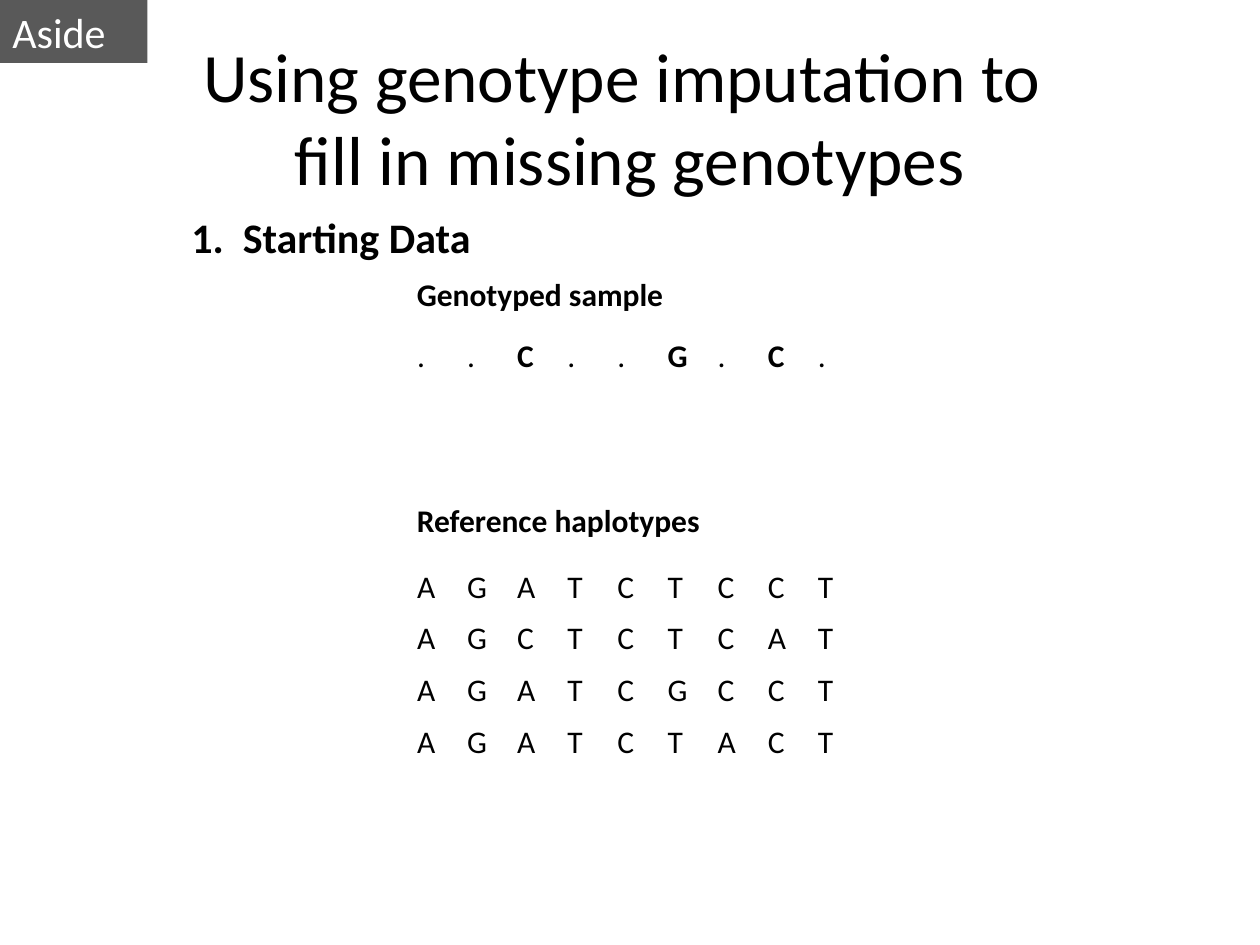
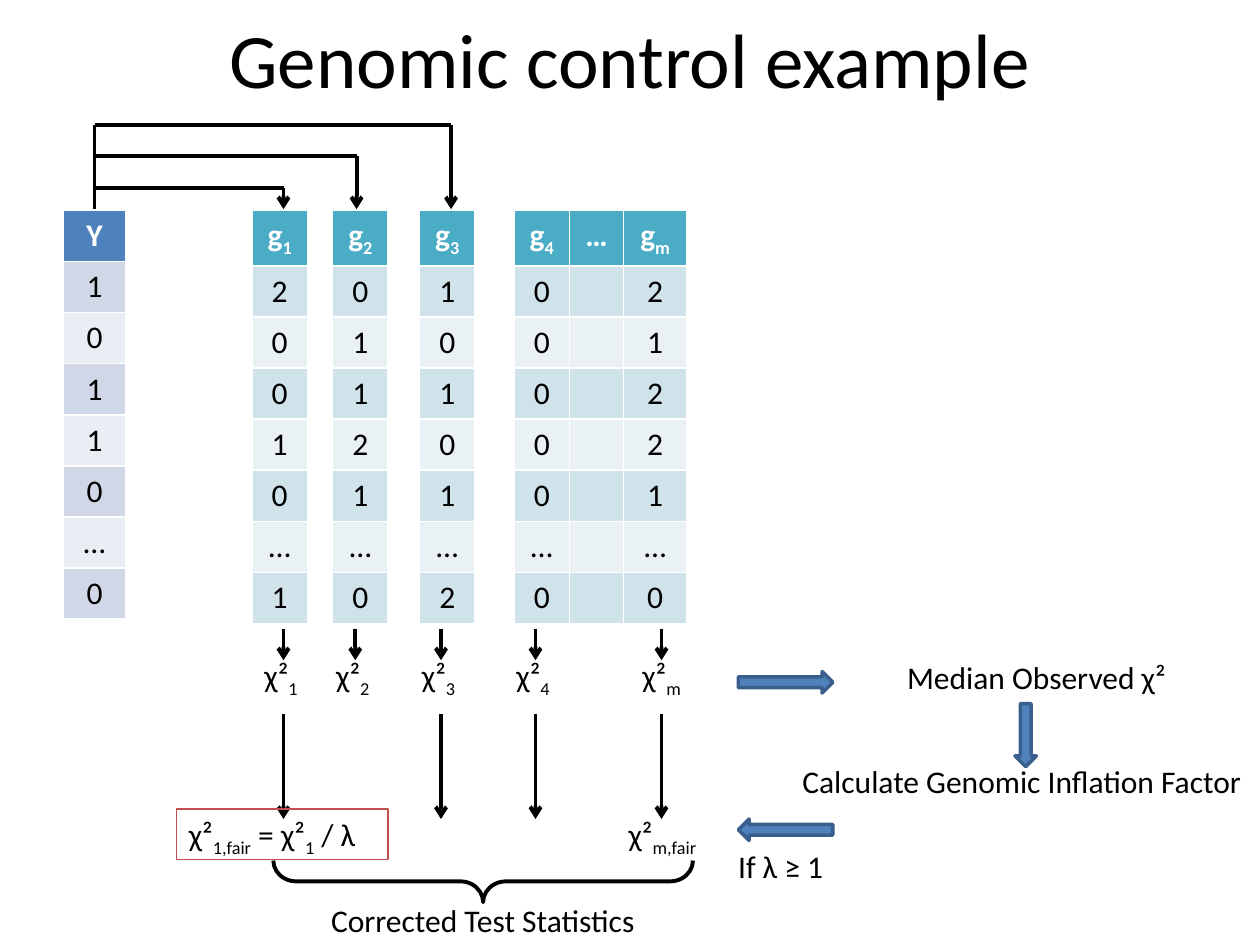
from dataclasses import dataclass

from lxml.etree import SubElement
from pptx import Presentation
from pptx.dml.color import RGBColor
from pptx.enum.shapes import MSO_CONNECTOR as Connector, MSO_SHAPE as Preset
from pptx.enum.text import MSO_ANCHOR as Anchor, MSO_AUTO_SIZE as AutoSize, PP_ALIGN as Align
from pptx.oxml.ns import qn
from pptx.util import Inches, Pt


@dataclass(frozen=True)
class Theme:
    font: str = "Calibri"
    black: str = "000000"
    white: str = "FFFFFF"
    tag: str = "595959"
    blue: str = "4F81BD"
    blue_edge: str = "3A5F8C"
    red: str = "C0504D"
    blue_table: tuple = ("4F81BD", "D0D8E8", "E9EDF4")
    teal_table: tuple = ("4BACC6", "D0E3EA", "E9F1F5")
    title: float = 44
    long_title: float = 39.6
    heading: float = 24
    body: float = 18
    stroke: float = 2.25


THEME = Theme()

IMPUTATION_TITLE = ["Using genotype imputation to ", "fill in missing genotypes"]
IMPUTATION_LABELS = [
    ("Genotyped sample", 3.21, 2.13, 2.2, 0.4, THEME.body),
    ("Reference haplotypes", 3.21, 3.93, 2.46, 0.4, THEME.body),
    ("1.  Starting Data", 1.42, 1.63, 2.44, 0.5, THEME.heading),
]
SAMPLE = ["..C..G.C."]
HAPLOTYPES = ["AGATCTCCT", "AGCTCTCAT", "AGATCGCCT", "AGATCTACT"]
SEQUENCE_LEFT, SEQUENCE_WIDTH, ROW_HEIGHT = 3.21, 3.58, 0.41

CONTROL_TITLE = ["Genomic control example"]
# Text is a tuple of parts: every second part is a subscript.
DATA_TABLES = [
    (0.5, [0.5], THEME.blue_table, [("Y",)], ["10110…0"]),
    (2, [0.44], THEME.teal_table, [("g", "1")], ["20010…1"]),
    (2.64, [0.44], THEME.teal_table, [("g", "2")], ["01121…0"]),
    (3.33, [0.44], THEME.teal_table, [("g", "3")], ["10101…2"]),
    (4.08, [0.44, 0.43, 0.5], THEME.teal_table,
     [("g", "4"), ("…",), ("g", "m")], ["00000…0", " " * 7, "21221…0"]),
]
DATA_TOP, DATA_HEIGHT = 1.67, 3.24
TRAIT_X, BRANCH_BOTTOM, BRANCH_STEP = 0.75, 1.66, 0.25
BRANCHES = [3.58, 2.83, 2.25]
BRANCH_TOP = 0.99
STATISTICS = [
    ("1", 2.25, 0.51, True),
    ("2", 2.82, 0.51, False),
    ("3", 3.5, 0.51, True),
    ("4", 4.25, 0.51, True),
    ("m", 5.25, 0.56, True),
]
CONTROL_LABELS = [
    (("Median Observed χ²",), 7.1, 5.17, 2.31),
    (("Calculate Genomic Inflation Factor",), 6.27, 6, 3.73),
    (("χ²", "m,fair"), 4.89, 6.42, 0.83),
    (("Corrected Test Statistics",), 2.53, 7.1, 2.64),
    (("If λ ≥ 1",), 5.76, 6.67, 0.91),
]
CORRECTION = ("χ²", "1,fair", " = χ²", "1", " / λ")
FLOW_ARROWS = [(5.86, 5.33, 0.75, 0), (7.89, 5.75, 0.5, 90), (5.86, 6.5, 0.75, 180)]


def rgb(color):
    return RGBColor.from_string(color)


def add_span(para, text, size=THEME.body, color=THEME.black, bold=False, subscript=False):
    span = para.add_run()
    span.text = text
    span.font.name = THEME.font
    span.font.size = Pt(size)
    span.font.bold = bold
    span.font.color.rgb = rgb(color)
    if subscript:
        span.font._element.set("baseline", "-25000")


def add_parts(para, parts, **style):
    for index, part in enumerate(parts):
        add_span(para, part, subscript=index % 2 == 1, **style)


def add_page(deck, lines, top, height, size):
    page = deck.slides.add_slide(deck.slide_layouts[5])
    title = page.shapes.title
    title.left, title.top = Inches(0.5), Inches(top)
    title.width, title.height = Inches(9), Inches(height)
    title.text_frame.vertical_anchor = Anchor.MIDDLE
    para = title.text_frame.paragraphs[0]
    para.alignment = Align.CENTER
    for index, line in enumerate(lines):
        if index:
            para.add_line_break()
        add_span(para, line, size)
    return page


def write(box, parts, wrap=False, **style):
    frame = box.text_frame
    frame.word_wrap = wrap
    frame.auto_size = AutoSize.SHAPE_TO_FIT_TEXT
    frame.vertical_anchor = Anchor.TOP
    frame.paragraphs[0].alignment = Align.LEFT
    add_parts(frame.paragraphs[0], parts, **style)


def add_label(page, parts, left, top, width, height=0.4, **style):
    box = page.shapes.add_textbox(Inches(left), Inches(top), Inches(width), Inches(height))
    write(box, parts, **style)


def add_preset(page, preset, left, top, width, height, fill=None, edge=None, stroke=1.0, turn=0):
    shape = page.shapes.add_shape(
        preset, Inches(left), Inches(top), Inches(width), Inches(height))
    shape.shadow.inherit = False
    shape.rotation = turn
    if fill:
        shape.fill.solid()
        shape.fill.fore_color.rgb = rgb(fill)
    else:
        shape.fill.background()
    if edge:
        shape.line.color.rgb = rgb(edge)
        shape.line.width = Pt(stroke)
    else:
        shape.line.fill.background()
    return shape


def add_line(page, start, end, arrow=False):
    line = page.shapes.add_connector(
        Connector.STRAIGHT, *(Inches(value) for value in (*start, *end)))
    line.line.color.rgb = rgb(THEME.black)
    line.line.width = Pt(THEME.stroke)
    properties = line._element.spPr
    if arrow:
        SubElement(properties.find(qn("a:ln")), qn("a:tailEnd"), type="arrow")
    SubElement(properties, qn("a:effectLst"))


def add_grid(page, rows, columns, left, top, widths, height):
    grid = page.shapes.add_table(
        rows, columns, Inches(left), Inches(top), Inches(sum(widths)), Inches(height)).table
    for column, width in zip(grid.columns, widths):
        column.width = Inches(width)
    return grid


def add_sequences(page, sequences, top, bold_letters=False):
    count = len(sequences[0])
    grid = add_grid(page, len(sequences), count, SEQUENCE_LEFT, top,
                    [SEQUENCE_WIDTH / count] * count, ROW_HEIGHT * len(sequences))
    grid.first_row = grid.horz_banding = False
    for row, sequence in enumerate(sequences):
        for column, letter in enumerate(sequence):
            cell = grid.cell(row, column)
            cell.fill.background()
            add_span(cell.text_frame.paragraphs[0], letter, bold=bold_letters and letter != ".")


def add_data_table(page, left, widths, fills, headers, columns):
    header_fill, *bands = fills
    grid = add_grid(page, len(columns[0]) + 1, len(columns), left, DATA_TOP, widths, DATA_HEIGHT)
    for column, (header, values) in enumerate(zip(headers, columns)):
        for row, parts in enumerate([header, *values]):
            cell = grid.cell(row, column)
            cell.fill.solid()
            cell.fill.fore_color.rgb = rgb(bands[(row - 1) % 2] if row else header_fill)
            para = cell.text_frame.paragraphs[0]
            para.alignment = Align.CENTER
            if row == 0:
                add_parts(para, parts, color=THEME.white, bold=True)
            elif parts.strip():
                add_span(para, parts)
            else:
                para.font.size = Pt(THEME.body)


def build_imputation(deck):
    page = add_page(deck, IMPUTATION_TITLE, 0.3, 1.25, THEME.long_title)
    add_sequences(page, HAPLOTYPES, 4.46)
    add_sequences(page, SAMPLE, 2.63, bold_letters=True)
    for text, left, top, width, height, size in IMPUTATION_LABELS:
        add_label(page, (text,), left, top, width, height, size=size, bold=True)
    tag = add_preset(page, Preset.RECTANGLE, 0, 0, 1.17, 0.5, fill=THEME.tag)
    write(tag, ("Aside",), wrap=True, size=THEME.heading, color=THEME.white)


def build_control(deck):
    page = add_page(deck, CONTROL_TITLE, 0, 0.92, THEME.title)
    for table in DATA_TABLES:
        add_data_table(page, *table)

    add_line(page, (TRAIT_X, BRANCH_TOP), (TRAIT_X, BRANCH_BOTTOM))
    for index, x in enumerate(BRANCHES):
        y = BRANCH_TOP + index * BRANCH_STEP
        add_line(page, (TRAIT_X, y), (x, y))
        add_line(page, (x, y), (x, BRANCH_BOTTOM), arrow=True)

    for marker, x, width, corrected in STATISTICS:
        add_line(page, (x, 4.99), (x, 5.24), arrow=True)
        add_label(page, ("χ²", marker), x - 0.25, 5.16, width)
        if corrected:
            add_line(page, (x, 5.67), (x, 6.5), arrow=True)

    for left, top, width, turn in FLOW_ARROWS:
        add_preset(page, Preset.RIGHT_ARROW, left, top, width, 0.17,
                   fill=THEME.blue, edge=THEME.blue_edge, stroke=2, turn=turn)
    correction = add_preset(page, Preset.RECTANGLE, 1.4, 6.42, 1.68, 0.4,
                            edge=THEME.red, stroke=0.75)
    write(correction, CORRECTION)
    brace = add_preset(page, Preset.LEFT_BRACE, 3.67, 5.33, 0.33, 3.33,
                       edge=THEME.black, stroke=THEME.stroke, turn=270)
    brace.adjustments[0] = 0.55
    for label in CONTROL_LABELS:
        add_label(page, *label)


def main():
    deck = Presentation()
    deck.slide_width, deck.slide_height = Inches(10), Inches(7.5)
    build_imputation(deck)
    build_control(deck)
    deck.save("out.pptx")


if __name__ == "__main__":
    main()
